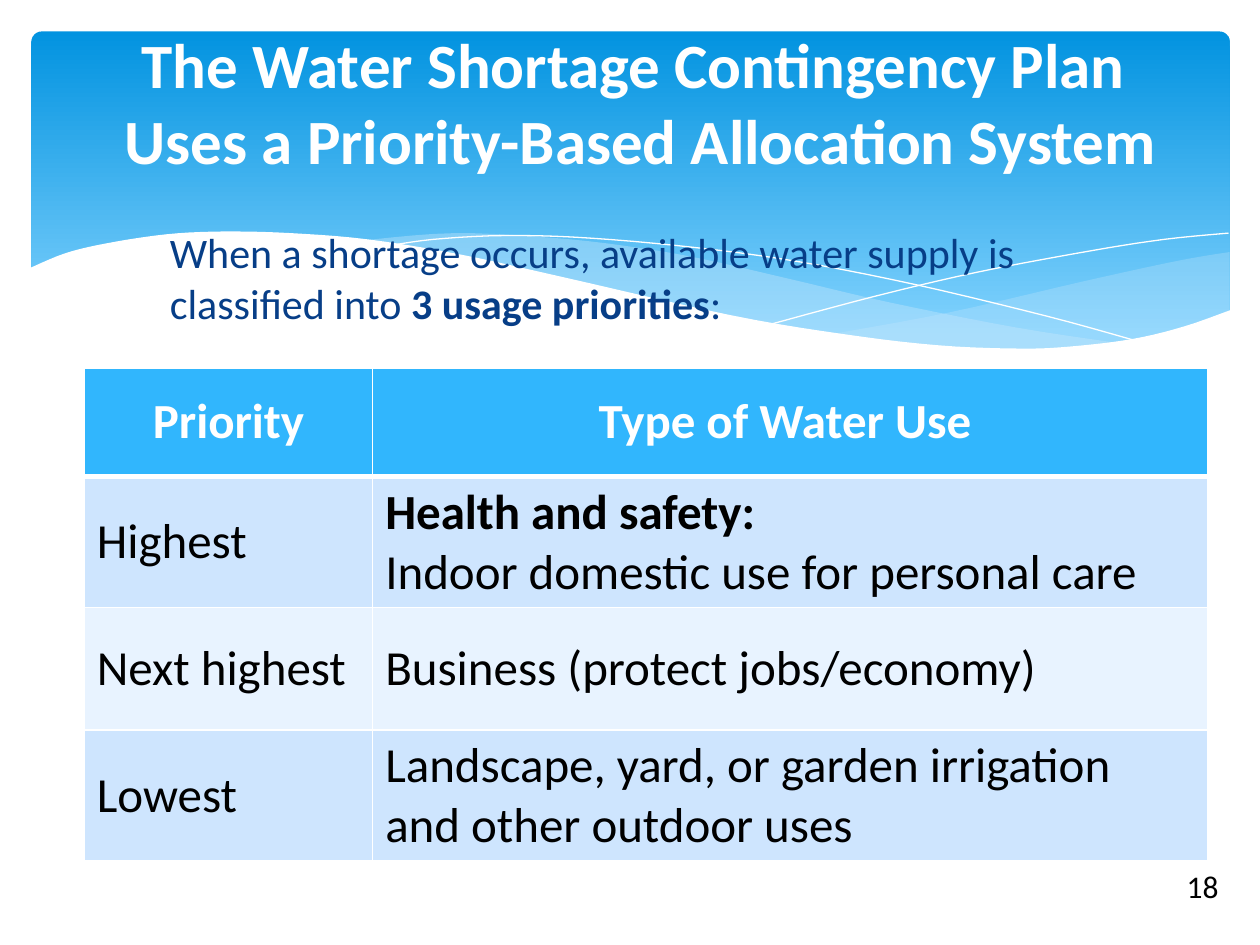
from lxml.etree import SubElement
from pptx import Presentation
from pptx.dml.color import RGBColor
from pptx.enum.shapes import MSO_SHAPE
from pptx.enum.text import MSO_ANCHOR, PP_ALIGN
from pptx.oxml.ns import qn
from pptx.util import Pt

WHITE = RGBColor(0xFF, 0xFF, 0xFF)
BLACK = RGBColor(0x00, 0x00, 0x00)
NAVY = RGBColor(0x07, 0x3E, 0x87)
SKY_DARK = RGBColor(0x02, 0x93, 0xE0)
SKY_LIGHT = RGBColor(0x83, 0xD3, 0xFE)
RIBBON = RGBColor(0xC6, 0xE7, 0xFC)
HEADER = RGBColor(0x31, 0xB6, 0xFD)
BAND_DARK = RGBColor(0xCE, 0xE5, 0xFE)
BAND_LIGHT = RGBColor(0xE8, 0xF3, 0xFF)

WAVE_TOP = [(703.4, 177.1), (676.8, 186.5), (647.3, 193.7), (612, 198), (582.5, 199.2),
            (535.7, 197.3), (481, 190.8), (416.9, 180), (321.8, 158.4), (262.8, 145.4),
            (210.2, 136.8), (165.6, 133.2), (127.4, 132.3), (95, 133.9), (61.2, 139),
            (37.4, 144.7), (16.6, 153.4)]
WAVE_BASE = [(16.6, 236.9), (703.4, 236.9)]
RIGHT_RIBBON_TOP = [(702.7, 144), (673.2, 149), (619.9, 160.6), (542.2, 178.6), (475.9, 190.8)]
RIGHT_RIBBON_BASE = [(475.9, 190.8), (507.6, 195.1), (536.4, 198), (578.2, 200.2),
                     (614.9, 198.7), (645.8, 194.4), (673.2, 188.6), (702.7, 177.8)]
LONG_RIBBON_TOP = [(643, 196.6), (581, 187.2), (508.3, 172.8), (452.9, 159.8), (399.6, 147.6),
                   (361.4, 141.1), (318.2, 136.1), (259.9, 133.2), (205.9, 137.5)]
LONG_RIBBON_BASE = [(205.9, 137.5), (246.2, 143.3), (290.9, 151.9), (323.3, 159.8),
                    (381.6, 172.8), (445, 185.8), (500.4, 194.4), (556.6, 199.4),
                    (596.2, 200.2), (643, 196.6)]
FALLING_LINE = [(222.5, 140.4), (247.7, 136.8), (288.7, 134.6), (337.7, 136.1), (400.3, 141.8),
                (457.9, 149.8), (523.4, 162.7), (598.3, 180.7), (653, 195.8)]
RISING_LINE = [(441.4, 185), (500.4, 169.2), (558.7, 155.5), (623.5, 143.3), (665.3, 136.8),
               (702, 133.2)]

PRIORITIES = [
    ("Highest", [[("Health and safety:", {"bold": True})],
                 [("Indoor domestic use for personal care", {})]]),
    ("Next highest", [[("Business (protect jobs/economy)", {})]]),
    ("Lowest", [[("Landscape, yard, or garden irrigation and other outdoor uses", {})]]),
]


def smooth_curve(knots, steps=5):
    """Return points of a Catmull-Rom curve through the knots."""
    padded = [knots[0], *knots, knots[-1]]
    points = [knots[0]]
    for before, start, end, after in zip(padded, padded[1:], padded[2:], padded[3:]):
        for step in range(1, steps + 1):
            t = step / steps
            points.append(tuple(
                (2 * b + (c - a) * t + (2 * a - 5 * b + 4 * c - d) * t ** 2
                 + (3 * b - a - 3 * c + d) * t ** 3) / 2
                for a, b, c, d in zip(before, start, end, after)))
    return points


class SlideBuilder:
    font_name = "Calibri"

    def __init__(self, presentation):
        self.slide = presentation.slides.add_slide(presentation.slide_layouts[6])

    def fill_text(self, frame, paragraphs, alignment=PP_ALIGN.LEFT, **base):
        """Fill a text frame; each paragraph is a list of (text, font values)."""
        for index, runs in enumerate(paragraphs):
            paragraph = frame.add_paragraph() if index else frame.paragraphs[0]
            paragraph.alignment = alignment
            for text, values in runs:
                for line_index, line in enumerate(text.split("\n")):
                    if line_index:
                        paragraph.add_line_break()
                    run = paragraph.add_run()
                    run.text = line
                    font_values = {"name": self.font_name, "bold": False, **base, **values}
                    run.font.color.rgb = font_values.pop("color")
                    for name, value in font_values.items():
                        setattr(run.font, name, value)

    def text(self, left, top, width, height, paragraphs, anchor=MSO_ANCHOR.TOP, wrap=True, **style):
        box = self.slide.shapes.add_textbox(Pt(left), Pt(top), Pt(width), Pt(height))
        box.text_frame.word_wrap = wrap
        box.text_frame.vertical_anchor = anchor
        self.fill_text(box.text_frame, paragraphs, **style)

    def gradient_panel(self, left, top, width, height, start, end):
        shape = self.slide.shapes.add_shape(
            MSO_SHAPE.ROUNDED_RECTANGLE, Pt(left), Pt(top), Pt(width), Pt(height))
        shape.shadow.inherit = False
        shape.adjustments[0] = 0.03
        shape.line.fill.background()
        shape.fill.gradient()
        shape.fill.gradient_angle = 270
        for stop, color, position in zip(shape.fill.gradient_stops, (start, end), (0, 0.9)):
            stop.color.rgb = color
            stop.position = position

    def freeform(self, points, close):
        corners = [(Pt(x), Pt(y)) for x, y in points]
        builder = self.slide.shapes.build_freeform(*corners[0], scale=1)
        builder.add_line_segments(corners[1:], close=close)
        shape = builder.convert_to_shape()
        shape.shadow.inherit = False
        return shape

    def area(self, points, color, opacity=100):
        shape = self.freeform(points, True)
        shape.fill.solid()
        shape.fill.fore_color.rgb = color
        if opacity < 100:
            for element in shape.element.spPr.iter(qn("a:srgbClr")):
                SubElement(element, qn("a:alpha"), val=str(opacity * 1000))
        shape.line.fill.background()

    def curve(self, knots, color):
        shape = self.freeform(smooth_curve(knots), False)
        shape.fill.background()
        shape.line.color.rgb = color
        shape.line.width = Pt(0)

    def cell(self, cell, paragraphs, fill, bottom_width=1, **style):
        properties = cell._tc.get_or_add_tcPr()
        for side, width in (("L", 1), ("R", 1), ("T", 1), ("B", bottom_width)):
            border = SubElement(properties, qn(f"a:ln{side}"), w=str(Pt(width)))
            solid = SubElement(border, qn("a:solidFill"))
            SubElement(solid, qn("a:srgbClr"), val=str(WHITE))
        cell.fill.solid()
        cell.fill.fore_color.rgb = fill
        cell.vertical_anchor = MSO_ANCHOR.MIDDLE
        self.fill_text(cell.text_frame, paragraphs, size=Pt(28), **style)

    def table(self, left, top, widths, heights, headings, rows):
        table = self.slide.shapes.add_table(
            len(heights), len(widths), Pt(left), Pt(top), Pt(sum(widths)), Pt(sum(heights))).table
        for column, width in zip(table.columns, widths):
            column.width = Pt(width)
        for row, height in zip(table.rows, heights):
            row.height = Pt(height)
        for column, heading in enumerate(headings):
            self.cell(table.cell(0, column), [[(heading, {})]], HEADER, bottom_width=3,
                      alignment=PP_ALIGN.CENTER, color=WHITE, bold=True)
        for index, (priority, use) in enumerate(rows, start=1):
            fill = BAND_DARK if index % 2 else BAND_LIGHT
            for column, paragraphs in enumerate(([[(priority, {})]], use)):
                self.cell(table.cell(index, column), paragraphs, fill, color=BLACK)


def main():
    presentation = Presentation()
    presentation.slide_width, presentation.slide_height = Pt(720), Pt(540)
    builder = SlideBuilder(presentation)

    builder.gradient_panel(18, 18, 684.7, 194.4, SKY_DARK, SKY_LIGHT)
    builder.area(smooth_curve(RIGHT_RIBBON_TOP) + smooth_curve(RIGHT_RIBBON_BASE), RIBBON, 29)
    builder.area(smooth_curve(LONG_RIBBON_TOP) + smooth_curve(LONG_RIBBON_BASE), RIBBON, 40)
    builder.curve(FALLING_LINE, WHITE)
    builder.curve(RISING_LINE, WHITE)
    builder.area(smooth_curve(WAVE_TOP) + WAVE_BASE, WHITE)

    builder.text(671, 491.8, 33, 29, [[("18", {})]], wrap=False, size=Pt(18), color=BLACK)
    builder.text(18, 8.6, 696.2, 98.6,
                 [[("The Water Shortage Contingency Plan \nUses a Priority-Based Allocation System", {})]],
                 anchor=MSO_ANCHOR.MIDDLE, alignment=PP_ALIGN.CENTER,
                 size=Pt(36), color=WHITE, bold=True)
    builder.text(90, 126, 570, 107,
                 [[("When a shortage occurs, available water supply is classified into ", {}),
                   ("3 usage priorities", {"bold": True}), (":", {})]],
                 size=Pt(24), color=NAVY)
    builder.table(48.2, 210.2, (164.8, 477.4), (62, 75, 70, 75),
                  ("Priority", "Type of Water Use "), PRIORITIES)

    presentation.save("out.pptx")


if __name__ == "__main__":
    main()
